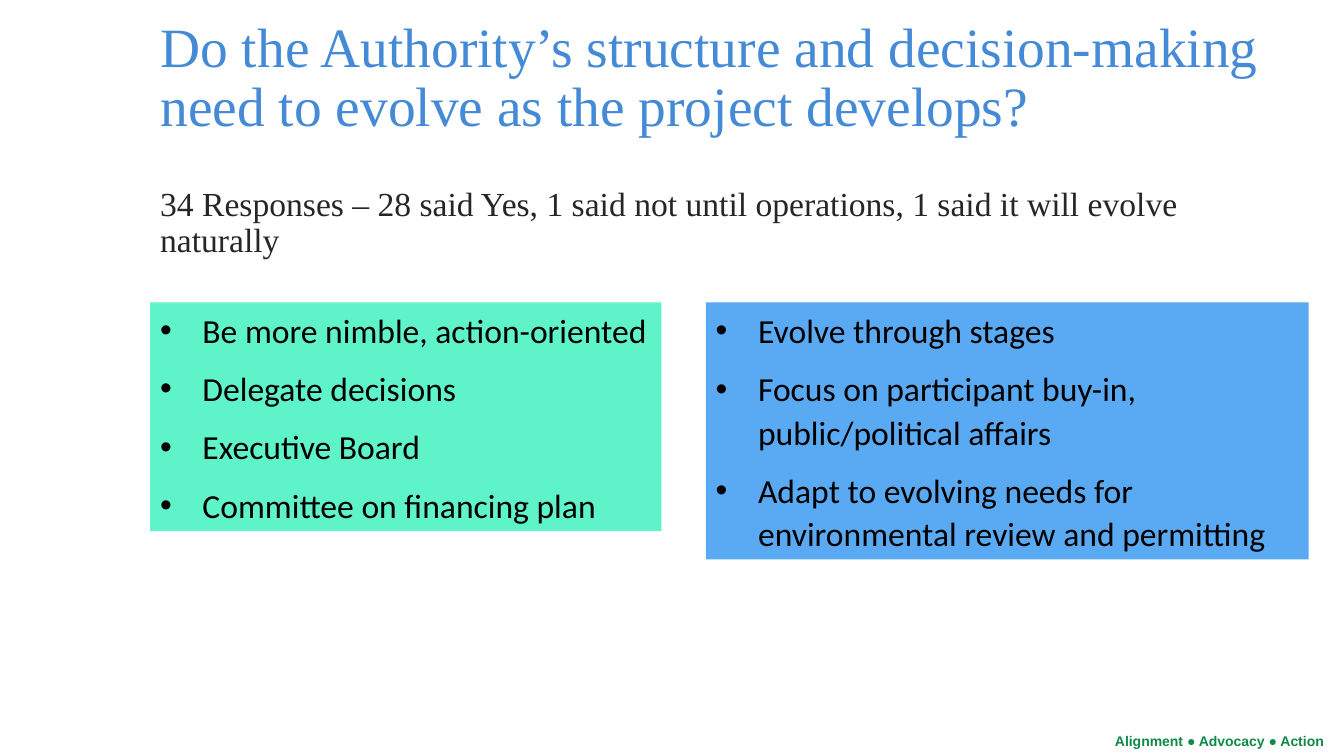
import pptx
import pptx.dml.color
import pptx.enum.shapes
import pptx.enum.text
import pptx.oxml
import pptx.oxml.ns
import pptx.util
from pptx.util import Inches

BULLET_INDENT = Inches(0.42)


def color(hex_value):
    return pptx.dml.color.RGBColor.from_string(hex_value)


def write_text(shape, lines, font, size, fill, bold=False, spacing=1.0, after=0,
               bullets=False, wrap=True, grow=False):
    """Fill a shape with one top-anchored, left-aligned paragraph per line."""
    frame = shape.text_frame
    frame.text = "\n".join(lines)
    frame.word_wrap = wrap
    frame.vertical_anchor = pptx.enum.text.MSO_ANCHOR.TOP
    auto_size = pptx.enum.text.MSO_AUTO_SIZE
    frame.auto_size = auto_size.SHAPE_TO_FIT_TEXT if grow else auto_size.NONE
    for paragraph in frame.paragraphs:
        paragraph.alignment = pptx.enum.text.PP_ALIGN.LEFT
        paragraph.line_spacing = spacing
        paragraph.space_before = pptx.util.Pt(0)
        paragraph.space_after = pptx.util.Pt(after)
        if bullets:
            properties = paragraph._p.get_or_add_pPr()
            properties.set("marL", str(BULLET_INDENT))
            properties.set("indent", str(-BULLET_INDENT))
            namespace = pptx.oxml.ns.nsdecls("a")
            properties.append(pptx.oxml.parse_xml(f'<a:buFont {namespace} typeface="Arial"/>'))
            properties.append(pptx.oxml.parse_xml(f'<a:buChar {namespace} char="•"/>'))
        for run in paragraph.runs:
            run.font.name = font
            run.font.size = pptx.util.Pt(size)
            run.font.bold = bold
            run.font.color.rgb = color(fill)


presentation = pptx.Presentation()
presentation.slide_width = Inches(13.33)
presentation.slide_height = Inches(7.5)
slide = presentation.slides.add_slide(presentation.slide_layouts.get_by_name("Title Only"))

footer = slide.shapes.add_textbox(Inches(10.96), Inches(7.22), Inches(2.39), Inches(0.27))
write_text(footer, ["Alignment ● Advocacy ● Action"], "Arial", 10, "0D8A45",
           bold=True, wrap=False, grow=True)

title = slide.shapes.title
title.left, title.top = Inches(1.49), Inches(0.14)
title.width, title.height = Inches(11.5), Inches(1.37)
write_text(title, ["Do the Authority’s structure and decision-making need to evolve "
                   "as the project develops?"],
           "Times New Roman", 39.6, "448AD7", spacing=0.9)

summary = slide.shapes.add_textbox(Inches(1.49), Inches(1.81), Inches(11.5), Inches(2.02))
write_text(summary, ["34 Responses – 28 said Yes, 1 said not until operations, "
                     "1 said it will evolve naturally"],
           "Times New Roman", 24, "262626", spacing=0.9)

panels = [
    (1.49, 5.07, 2.27, "5FF3CA", False, [
        "Be more nimble, action-oriented",
        "Delegate decisions",
        "Executive Board",
        "Committee on financing plan",
    ]),
    (7, 5.98, 2.55, "59AAF2", True, [
        "Evolve through stages",
        "Focus on participant buy-in, public/political affairs",
        "Adapt to evolving needs for environmental review and permitting",
    ]),
]
for left, width, height, background, wrap, points in panels:
    panel = slide.shapes.add_shape(pptx.enum.shapes.MSO_SHAPE.RECTANGLE,
                                   Inches(left), Inches(3), Inches(width), Inches(height))
    panel.shadow.inherit = False
    panel.fill.solid()
    panel.fill.fore_color.rgb = color(background)
    panel.line.fill.background()
    write_text(panel, points, "Calibri", 24, "000000", spacing=1.07, after=10.7,
               bullets=True, wrap=wrap, grow=True)

presentation.save("out.pptx")
